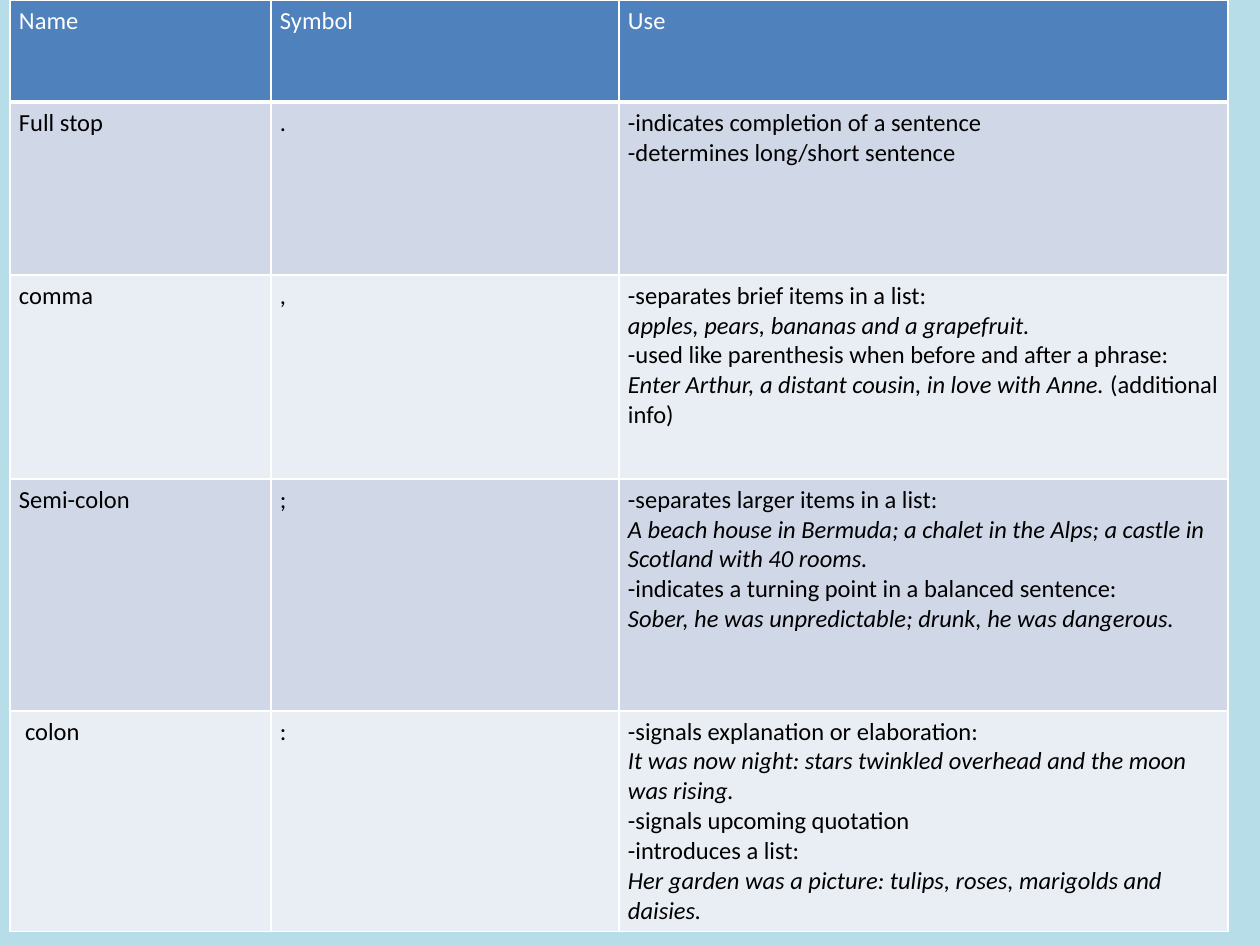
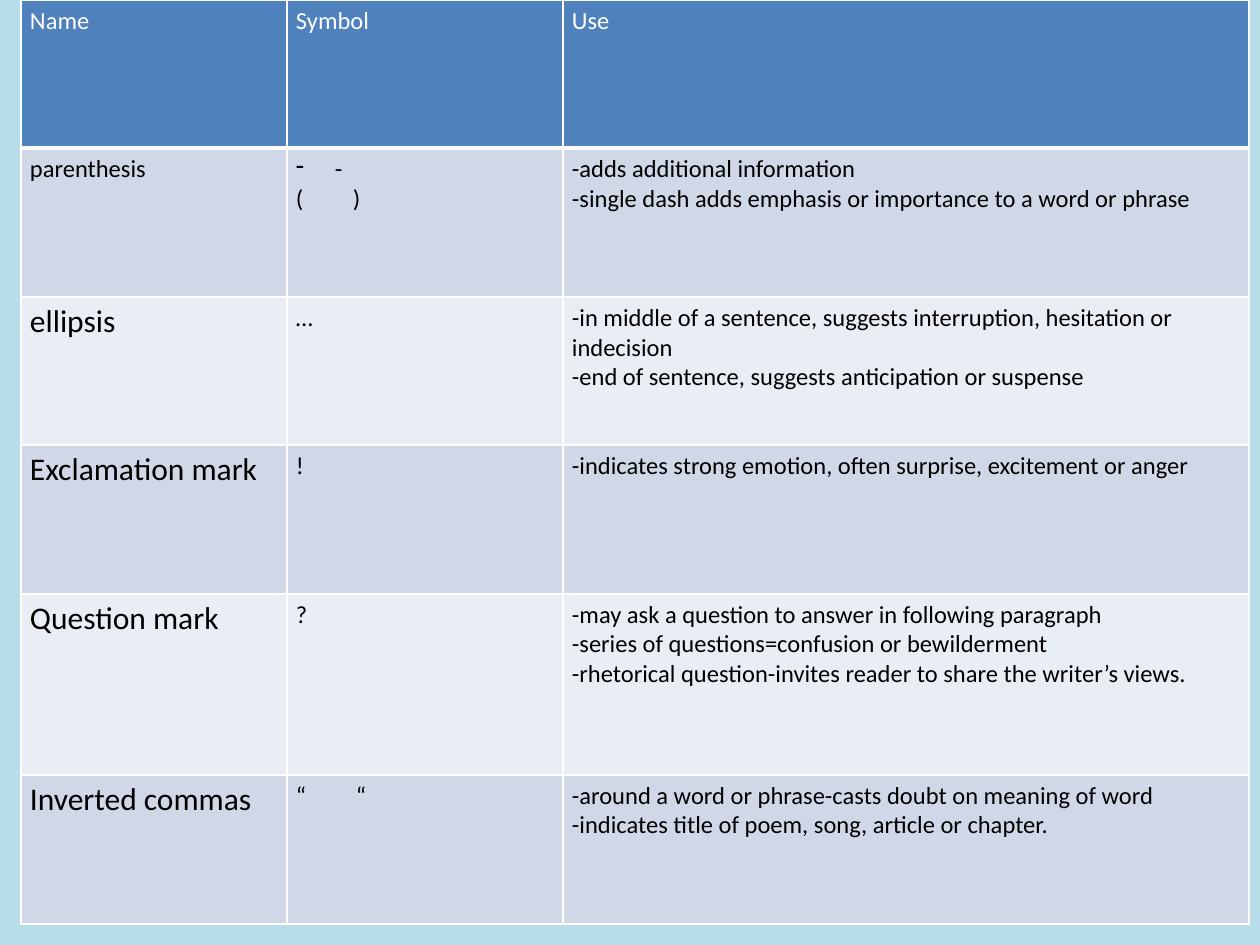
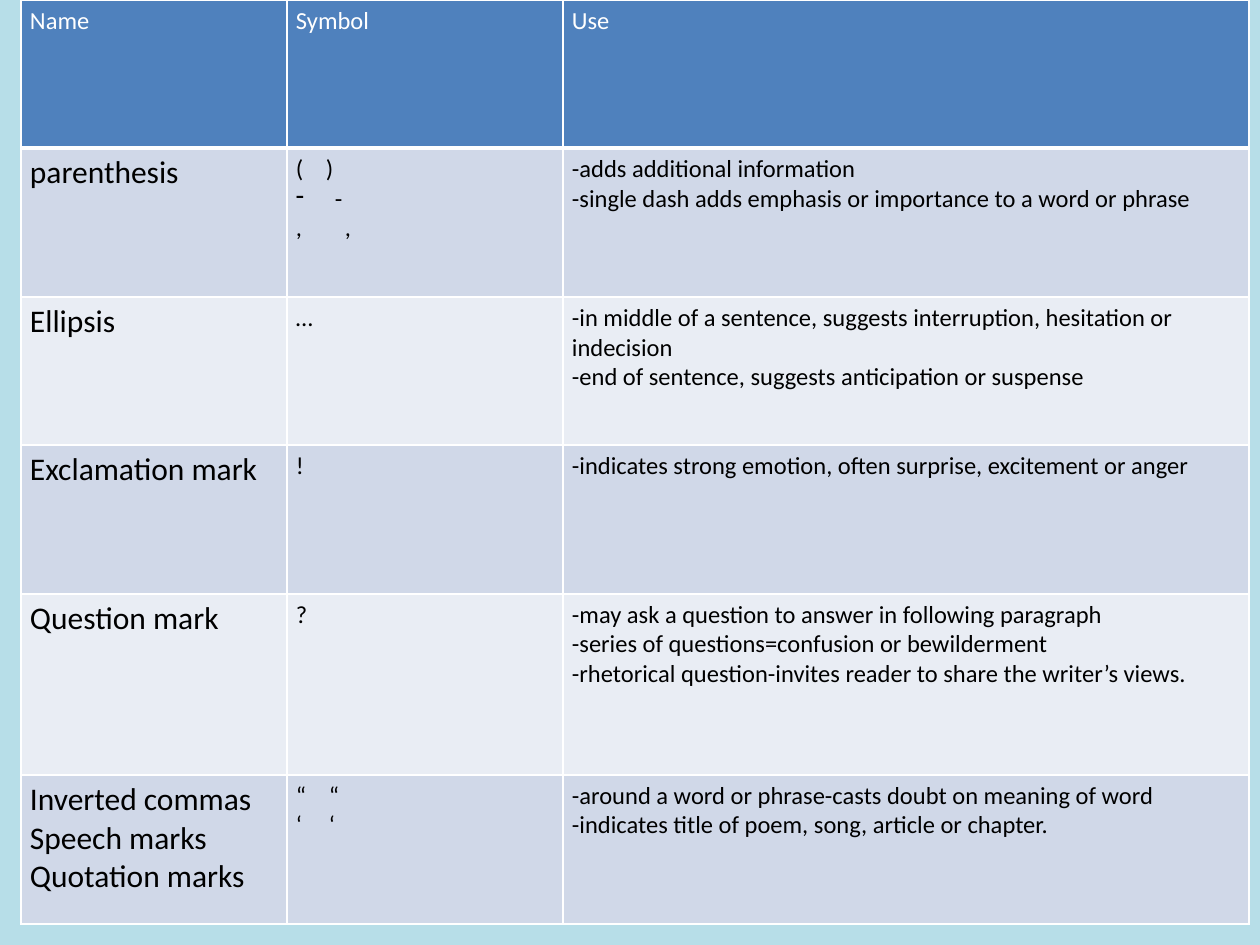
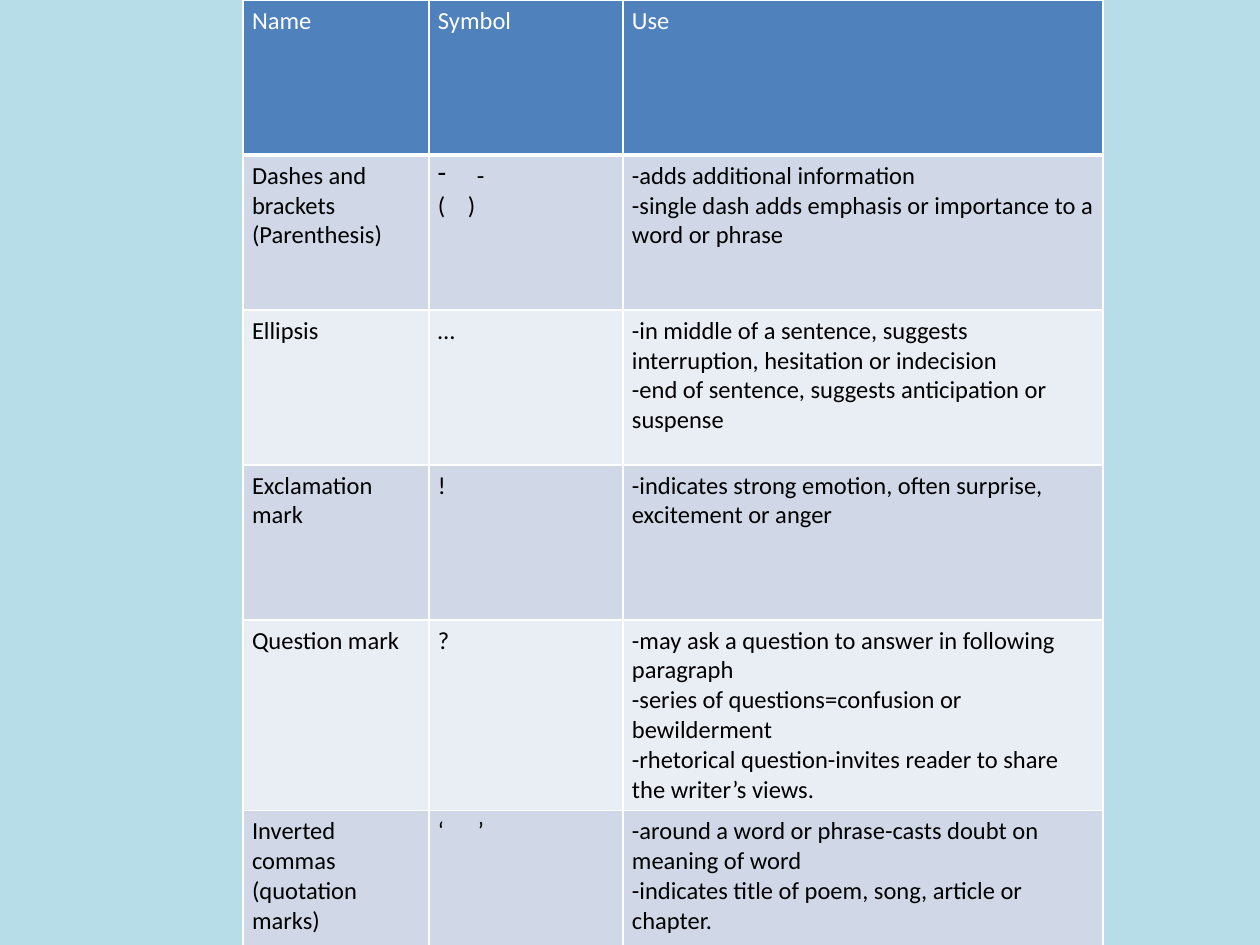
"""Build four slides of punctuation tables: name, symbol and use."""
import dataclasses

import pptx
import pptx.dml.color
import pptx.oxml
import pptx.oxml.ns
import pptx.util

EMU_PER_PX = 914400 / 126
SLIDE_SIZE = (1260, 945)
FONT = "Calibri"
TEXT_SIZE = 14
LARGE_SIZE = 18
COLORS = {
    "background": "B7DEE8",
    "header": "4F81BD",
    "header_text": "FFFFFF",
    "text": "000000",
    "dark_band": "D0D8E8",
    "light_band": "E9EDF4",
    "border": "FFFFFF",
}
HEADINGS = ("Name", "Symbol", "Use")


@dataclasses.dataclass
class Line:
    """One paragraph of a cell; text between underscores is italic."""

    text: str
    size: int = 0
    left: int = 0
    tab: int = 0
    dash: bool = False


DASHES = Line("-", left=39, dash=True)

SENTENCE_ROWS = [
    ("Full stop", ".", ["-indicates completion of a sentence", "-determines long/short sentence"]),
    ("comma", ",", [
        "-separates brief items in a list:",
        "_apples, pears, bananas and a grapefruit._",
        "-used like parenthesis when before and after a phrase:",
        "_Enter Arthur, a distant cousin, in love with Anne. _(additional info)",
    ]),
    ("Semi-colon", ";", [
        "-separates larger items in a list:",
        "_A beach house in Bermuda; a chalet in the Alps; a castle in Scotland with 40 rooms._",
        "-indicates a turning point in a balanced sentence:",
        "_Sober, he was unpredictable; drunk, he was dangerous._",
    ]),
    (Line("colon", left=6), ":", [
        "-signals explanation or elaboration:",
        "_It was now night: stars twinkled overhead and the moon was rising._",
        "-signals upcoming quotation",
        "-introduces a list:",
        "_Her garden was a picture: tulips, roses, marigolds and daisies._",
    ]),
]
MARK_USES = [
    ["-adds additional information",
     "-single dash adds emphasis or importance to a word or phrase"],
    ["-in middle of a sentence, suggests interruption, hesitation or indecision",
     "-end of sentence, suggests anticipation or suspense"],
    "-indicates strong emotion, often surprise, excitement or anger",
    ["-may ask a question to answer in following paragraph",
     "-series of questions=confusion or bewilderment",
     "-rhetorical question-invites reader to share the writer’s views."],
    ["-around a word or phrase-casts doubt on meaning of word",
     "-indicates title of poem, song, article or chapter."],
]
WIDE_COLUMNS = (266, 276, 686)
WIDE_ROWS = (148, 149, 148, 149, 181, 149)


def px(length):
    """Turn px into EMU."""
    return pptx.util.Emu(round(length * EMU_PER_PX))


def rgb(name):
    """Look up a colour by name."""
    return pptx.dml.color.RGBColor.from_string(COLORS[name])


def pair(opening, closing, gap):
    """Make a line of two symbols with a tab stop between them."""
    return Line(f"{opening}\t{closing}", tab=gap)


def mark_rows(parenthesis, ellipsis, inverted_commas):
    """Join names and symbols of the five marks with their shared uses."""
    marks = [parenthesis, (ellipsis, "…"), ("Exclamation mark", "!"),
             ("Question mark", "?"), inverted_commas]
    return [(*mark, use) for mark, use in zip(marks, MARK_USES)]


def add_child(parent, tag, **attributes):
    """Append a DrawingML element with the given attributes."""
    child = pptx.oxml.parse_xml(f"<a:{tag} {pptx.oxml.ns.nsdecls('a')}/>")
    for name, value in attributes.items():
        child.set(name, str(value))
    parent.append(child)
    return child


def set_borders(cell, bottom_width):
    """Draw the four borders of a cell ahead of its fill."""
    properties = cell._tc.get_or_add_tcPr()
    for position, side in enumerate("LRTB"):
        points = bottom_width if side == "B" else 1
        border = add_child(properties, f"ln{side}", w=pptx.util.Pt(points))
        add_child(add_child(border, "solidFill"), "srgbClr", val=COLORS["border"])
        properties.insert(position, border)


def write_line(paragraph, line, size, color):
    """Write one line with its indent, dash, tab stop and italic runs."""
    properties = paragraph._p.get_or_add_pPr()
    if line.left:
        properties.set("marL", str(px(line.left)))
    if line.dash:
        properties.set("indent", str(-px(line.left)))
        add_child(properties, "buChar", char="-")
    if line.tab:
        add_child(add_child(properties, "tabLst"), "tab", pos=px(line.tab), algn="l")
    for index, text in enumerate(line.text.split("_")):
        if text:
            run = paragraph.add_run()
            run.text = text
            run.font.name = FONT
            run.font.size = pptx.util.Pt(line.size or size)
            run.font.italic = index % 2 == 1
            run.font.color.rgb = rgb(color)


def write_cell(cell, content, fill, color="text", size=TEXT_SIZE, bottom_width=1):
    """Fill, border and write one table cell."""
    cell.margin_left = cell.margin_right = px(9)
    cell.margin_top = cell.margin_bottom = px(6)
    cell.fill.solid()
    cell.fill.fore_color.rgb = rgb(fill)
    set_borders(cell, bottom_width)
    lines = content if isinstance(content, list) else [content]
    for index, line in enumerate(lines):
        paragraphs = cell.text_frame
        paragraph = paragraphs.add_paragraph() if index else paragraphs.paragraphs[0]
        write_line(paragraph, line if isinstance(line, Line) else Line(line), size, color)


def add_table_slide(presentation, left, widths, heights, rows, name_size=TEXT_SIZE):
    """Add a slide with one punctuation table at its top edge."""
    slide = presentation.slides.add_slide(presentation.slide_layouts[6])
    table = slide.shapes.add_table(
        len(heights), len(widths), px(left), 0, px(sum(widths)), px(sum(heights))).table
    table.first_row = table.horz_banding = False
    for column, width in zip(table.columns, widths):
        column.width = px(width)
    for row, height in zip(table.rows, heights):
        row.height = px(height)
    for column, heading in enumerate(HEADINGS):
        write_cell(table.cell(0, column), heading, "header", "header_text", bottom_width=3)
    for number, contents in enumerate(rows, start=1):
        band = "dark_band" if number % 2 else "light_band"
        for column, content in enumerate(contents):
            size = TEXT_SIZE if column else name_size
            write_cell(table.cell(number, column), content, band, size=size)


def main():
    """Build and save the presentation."""
    presentation = pptx.Presentation()
    presentation.slide_width, presentation.slide_height = map(px, SLIDE_SIZE)
    background = presentation.slide_master.background.fill
    background.solid()
    background.fore_color.rgb = rgb("background")

    add_table_slide(presentation, 10, (261, 348, 609), (102, 173, 204, 232, 214), SENTENCE_ROWS)
    add_table_slide(presentation, 21, WIDE_COLUMNS, WIDE_ROWS, mark_rows(
        (Line("parenthesis", size=TEXT_SIZE), [DASHES, pair("(", ")", 57)]),
        "ellipsis",
        ("Inverted commas", pair("“", "“", 60)),
    ), LARGE_SIZE)
    add_table_slide(presentation, 21, WIDE_COLUMNS, WIDE_ROWS, mark_rows(
        ("parenthesis", [pair("(", ")", 30), DASHES, pair(",", ",", 49)]),
        "Ellipsis",
        (["Inverted commas", "Speech marks", "Quotation marks"],
         [pair("“", "“", 33), pair("‘", "‘", 33)]),
    ), LARGE_SIZE)
    add_table_slide(presentation, 243, (186, 194, 480), (155,) * 6, mark_rows(
        (["Dashes and brackets", "(Parenthesis)"], [DASHES, pair("(", ")", 30)]),
        "Ellipsis",
        (["Inverted commas", "(quotation marks)"], pair("‘", "’", 40)),
    ))
    presentation.save("out.pptx")


if __name__ == "__main__":
    main()
